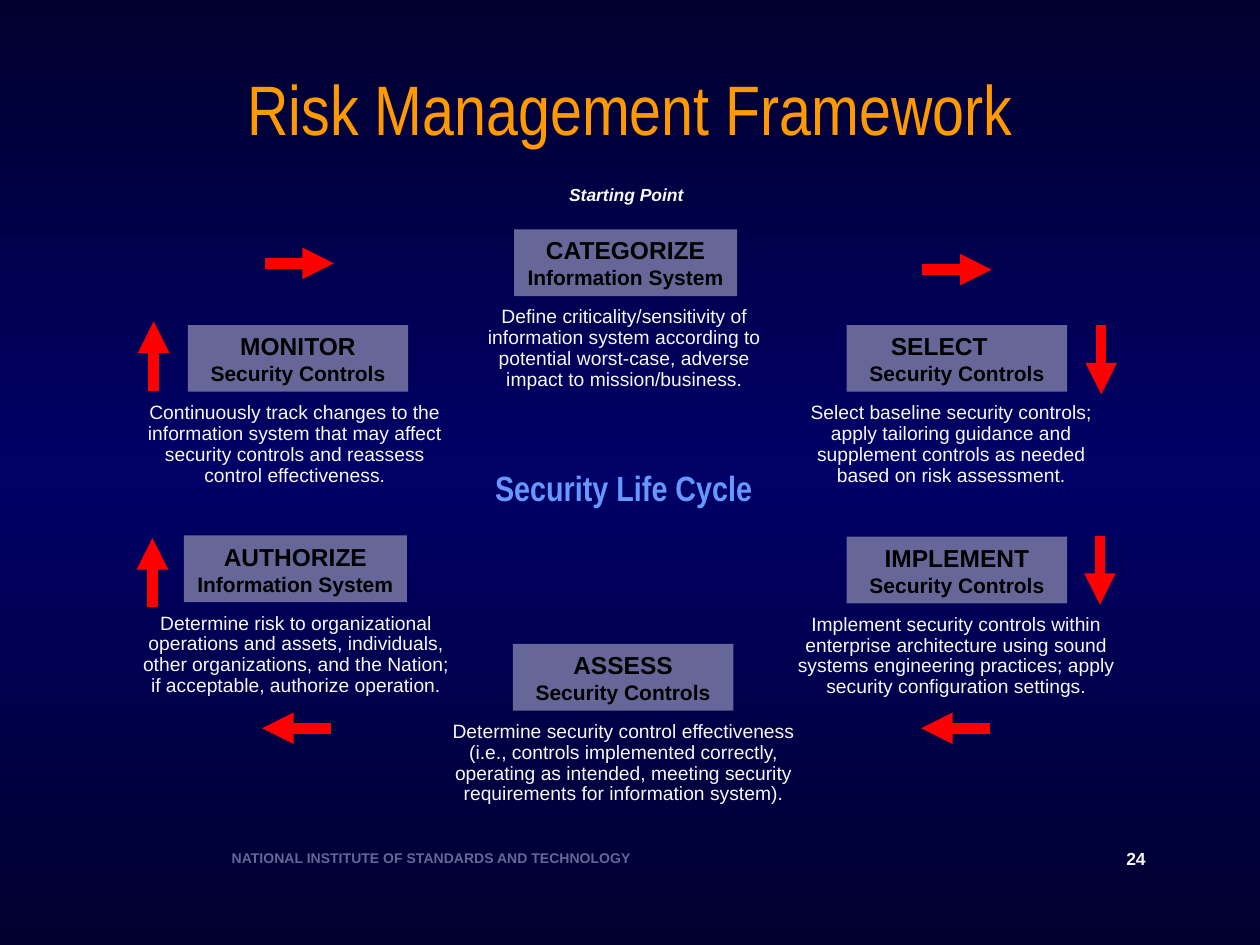
from pptx import Presentation
from pptx.dml.color import RGBColor
from pptx.enum.shapes import MSO_CONNECTOR as Connector, MSO_SHAPE as Shape
from pptx.enum.text import MSO_ANCHOR as Anchor, PP_ALIGN as Align
from pptx.oxml.ns import qn
from pptx.util import Inches, Pt
from copy import deepcopy
from lxml import etree

COLORS = {
    "edge": "00002F", "middle": "000066", "title": "FF9900", "cycle": "6699FF",
    "text": "F8F8F8", "heading": "000000", "muted": "666699", "arrow": "FF0000",
}
ARROW_LENGTH = 0.55
HEADING_HEIGHT = 0.53
DETAIL_OFFSET = 0.57

STEPS = [
    ("CATEGORIZE", "Information System", 0, 4.08, 1.77, 1.82, 3.73, 2.45,
     ["Define criticality/sensitivity of information system according to "
      "potential worst-case, adverse impact to mission/business."]),
    ("SELECT", "Security Controls", 0.3, 6.72, 1.75, 2.58, 6.23, 2.64,
     ["Select baseline security controls; apply tailoring guidance and "
      "supplement controls as needed based on risk assessment."]),
    ("IMPLEMENT", "Security Controls", 0, 6.72, 1.75, 4.26, 6.21, 2.76,
     ["Implement security controls within enterprise architecture using sound "
      "systems engineering practices; apply security configuration settings."]),
    ("ASSESS", "Security Controls", 0, 4.07, 1.75, 5.11, 3.47, 2.96,
     ["Determine security control effectiveness",
      "(i.e., controls implemented correctly, operating as intended, meeting "
      "security requirements for information system)."]),
    ("AUTHORIZE", "Information System", 0, 1.46, 1.77, 4.25, 0.98, 2.74,
     ["Determine risk to organizational operations and assets, individuals, "
      "other organizations, and the Nation;",
      "if acceptable, authorize operation."]),
    ("MONITOR", "Security Controls", 0, 1.49, 1.75, 2.58, 1, 2.68,
     ["Continuously track changes to the information system that may affect "
      "security controls and reassess control effectiveness."]),
]
ARROWS = [
    (2.1, 2.09, 1, 0), (7.32, 2.14, 1, 0), (8.74, 2.58, 0, 1), (8.73, 4.25, 0, 1),
    (7.86, 5.78, -1, 0), (2.63, 5.78, -1, 0), (1.21, 4.82, 0, -1), (1.22, 3.1, 0, -1),
]


def rgb(name):
    """Return the named colour."""
    return RGBColor.from_string(COLORS[name])


def write(paragraph, text, color, align=Align.CENTER, **font_values):
    """Fill a paragraph with text in one format."""
    run = paragraph.add_run()
    run.text = text
    paragraph.alignment = align
    run.font.color.rgb = rgb(color)
    for attribute, value in ({"name": "Arial"} | font_values).items():
        setattr(run.font, attribute, value)


def add_text(slide, box, lines, color, spacing=None, anchor=Anchor.TOP, **values):
    """Place a wrapped text box with one paragraph for each line."""
    frame = slide.shapes.add_textbox(*map(Inches, box)).text_frame
    frame.word_wrap = True
    frame.vertical_anchor = anchor
    for index, line in enumerate(lines):
        paragraph = frame.add_paragraph() if index else frame.paragraphs[0]
        paragraph.line_spacing = spacing
        write(paragraph, line, color, **values)


def add_background(slide):
    """Shade the slide from dark edges to a lighter middle."""
    fill = slide.background.fill
    fill.gradient()
    fill.gradient_angle = 90
    stop_list = slide.element.find(".//" + qn("a:gsLst"))
    stop_list.insert(1, deepcopy(stop_list[0]))
    for stop, position, name in zip(fill.gradient_stops, (0, 0.5, 1),
                                    ("edge", "middle", "edge")):
        stop.position = position
        stop.color.rgb = rgb(name)


def add_heading(slide, box, name, subject, indent):
    """Draw the filled box that names a step, its name centred or indented."""
    heading = slide.shapes.add_shape(Shape.RECTANGLE, *map(Inches, box))
    heading.shadow.inherit = False
    heading.fill.solid()
    heading.fill.fore_color.rgb = rgb("muted")
    heading.line.fill.background()
    frame = heading.text_frame
    frame_values = {"word_wrap": True, "vertical_anchor": Anchor.TOP,
                    "margin_left": Inches(0.05), "margin_right": Inches(0.05)}
    for attribute, value in frame_values.items():
        setattr(frame, attribute, value)
    name_align = Align.LEFT if indent else Align.CENTER
    lines = [(frame.paragraphs[0], name, 14, name_align, indent),
             (frame.add_paragraph(), subject, 12, Align.CENTER, 0)]
    for paragraph, text, size, align, margin in lines:
        write(paragraph, text, "heading", align, size=Pt(size), bold=True)
        properties = paragraph._p.get_or_add_pPr()
        properties.set("marL", str(Inches(margin)))
        properties.set("indent", "0")


def add_step(slide, name, subject, indent, left, width, top,
             detail_left, detail_width, details):
    """Place a step heading with its explanation below."""
    add_heading(slide, (left, top, width, HEADING_HEIGHT), name, subject, indent)
    add_text(slide, (detail_left, top + DETAIL_OFFSET, detail_width, 0.76),
             details, "text", spacing=0.9, size=Pt(11))


def add_arrow(slide, x, y, across, down):
    """Draw a red arrow from a point in the given direction."""
    ends = (x, y, x + across * ARROW_LENGTH, y + down * ARROW_LENGTH)
    arrow = slide.shapes.add_connector(Connector.STRAIGHT, *map(Inches, ends))
    arrow.line.color.rgb = rgb("arrow")
    arrow.line.width = Pt(6)
    etree.SubElement(arrow.line._get_or_add_ln(), qn("a:tailEnd"), type="triangle")
    etree.SubElement(arrow.element.spPr, qn("a:effectLst"))


def add_titles(slide):
    """Place the title and the labels of the cycle."""
    add_text(slide, (0.75, 0.35, 8.5, 1), ["Risk Management Framework"], "title",
             anchor=Anchor.MIDDLE, name="Arial Narrow", size=Pt(40))
    add_text(slide, (4.26, 1.41, 1.42, 0.27), ["Starting Point"], "text",
             size=Pt(10), bold=True, italic=True)
    add_text(slide, (3.69, 3.65, 2.52, 0.43), ["Security Life Cycle"], "cycle",
             name="Arial Narrow", size=Pt(20), bold=True)


def add_footer(slide):
    """Place the institute name and the slide number."""
    add_text(slide, (1.74, 6.69, 7.25, 0.23),
             ["NATIONAL INSTITUTE OF STANDARDS AND TECHNOLOGY"], "muted",
             align=Align.LEFT, size=Pt(8), bold=True)
    add_text(slide, (8.84, 6.68, 0.42, 0.27), ["24"], "text",
             align=Align.LEFT, size=Pt(10), bold=True)


def main():
    """Build and save the slide."""
    deck = Presentation()
    deck.slide_width, deck.slide_height = Inches(10), Inches(7.5)
    slide = deck.slides.add_slide(deck.slide_layouts[6])
    add_background(slide)
    add_titles(slide)
    for step in STEPS:
        add_step(slide, *step)
    for arrow in ARROWS:
        add_arrow(slide, *arrow)
    add_footer(slide)
    deck.save("out.pptx")


if __name__ == "__main__":
    main()
